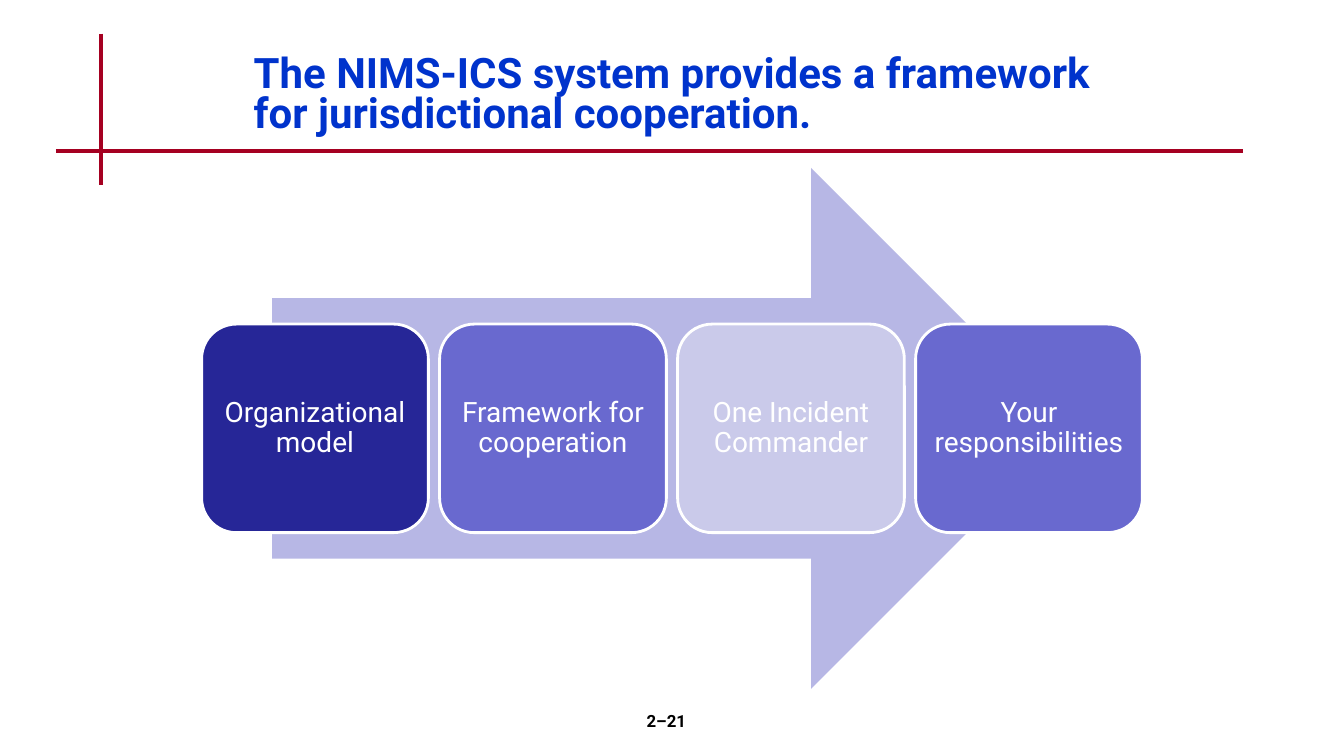
from pptx import Presentation
from pptx.dml.color import RGBColor
from pptx.enum.shapes import MSO_CONNECTOR, MSO_SHAPE
from pptx.enum.text import MSO_ANCHOR, MSO_AUTO_SIZE, PP_ALIGN
from pptx.oxml.ns import qn
from pptx.util import Pt
from lxml import etree

FONT = "Roboto"
WHITE = RGBColor(0xFF, 0xFF, 0xFF)
BLACK = RGBColor(0x00, 0x00, 0x00)
TITLE_BLUE = RGBColor(0x00, 0x33, 0xCC)
RULE_RED = RGBColor(0xA5, 0x00, 0x21)
ARROW_LILAC = RGBColor(0xB7, 0xB7, 0xE5)
NAVY = RGBColor(0x26, 0x26, 0x97)
VIOLET = RGBColor(0x69, 0x69, 0xCF)
PALE = RGBColor(0xCA, 0xCA, 0xEA)

TITLE = "The NIMS-ICS system provides a framework for jurisdictional cooperation."
PAGE_NUMBER = "2–21"
CARDS = [
    ("Organizational model", NAVY),
    ("Framework for cooperation", VIOLET),
    ("One Incident Commander", PALE),
    ("Your responsibilities", VIOLET),
]
RULES = [(72, 24, 72, 132), (40, 108, 888, 108)]

ARROW_BOX = (194.4, 120, 571, 372)
CARD_LEFT, CARD_WIDTH, CARD_HEIGHT, CARD_GAP = 144, 162, 149, 8
CARD_TOP = ARROW_BOX[1] + (ARROW_BOX[3] - CARD_HEIGHT) / 2


def points(values):
    return [Pt(value) for value in values]


def write(shape, text, size, color, alignment, bold=False, spacing=1.0):
    frame = shape.text_frame
    frame.word_wrap = True
    frame.text = text
    paragraph = frame.paragraphs[0]
    paragraph.alignment = alignment
    paragraph.line_spacing = spacing
    font = paragraph.font
    font.name, font.size, font.bold = FONT, Pt(size), bold
    font.color.rgb = color
    return frame


def add_filled_shape(slide, preset, box, color):
    shape = slide.shapes.add_shape(preset, *points(box))
    shape.shadow.inherit = False
    shape.fill.solid()
    shape.fill.fore_color.rgb = color
    shape.line.fill.background()
    return shape


presentation = Presentation()
presentation.slide_width, presentation.slide_height = Pt(960), Pt(540)
slide = presentation.slides.add_slide(presentation.slide_layouts[5])

for ends in RULES:
    rule = slide.shapes.add_connector(MSO_CONNECTOR.STRAIGHT, *points(ends))
    rule.line.color.rgb = RULE_RED
    rule.line.width = Pt(3)
    etree.SubElement(rule._element.spPr, qn("a:effectLst"))

add_filled_shape(slide, MSO_SHAPE.RIGHT_ARROW, ARROW_BOX, ARROW_LILAC)

for index, (label, color) in enumerate(CARDS):
    left = CARD_LEFT + index * (CARD_WIDTH + CARD_GAP)
    card = add_filled_shape(slide, MSO_SHAPE.ROUNDED_RECTANGLE,
                            (left, CARD_TOP, CARD_WIDTH, CARD_HEIGHT), color)
    card.line.color.rgb = WHITE
    card.line.width = Pt(2)
    frame = write(card, label, 20, WHITE, PP_ALIGN.CENTER, spacing=0.9)
    frame.vertical_anchor = MSO_ANCHOR.MIDDLE
    frame.margin_left = frame.margin_right = Pt(5)

title = slide.shapes.title
title.left, title.top, title.width, title.height = points((174, 24, 654, 90))
frame = write(title, TITLE, 30, TITLE_BLUE, PP_ALIGN.LEFT, bold=True, spacing=0.8)
frame.vertical_anchor = MSO_ANCHOR.MIDDLE
frame.auto_size = MSO_AUTO_SIZE.NONE

page_number = slide.shapes.add_textbox(*points((376, 504, 200, 36)))
write(page_number, PAGE_NUMBER, 12, BLACK, PP_ALIGN.CENTER, bold=True)

presentation.save("out.pptx")
